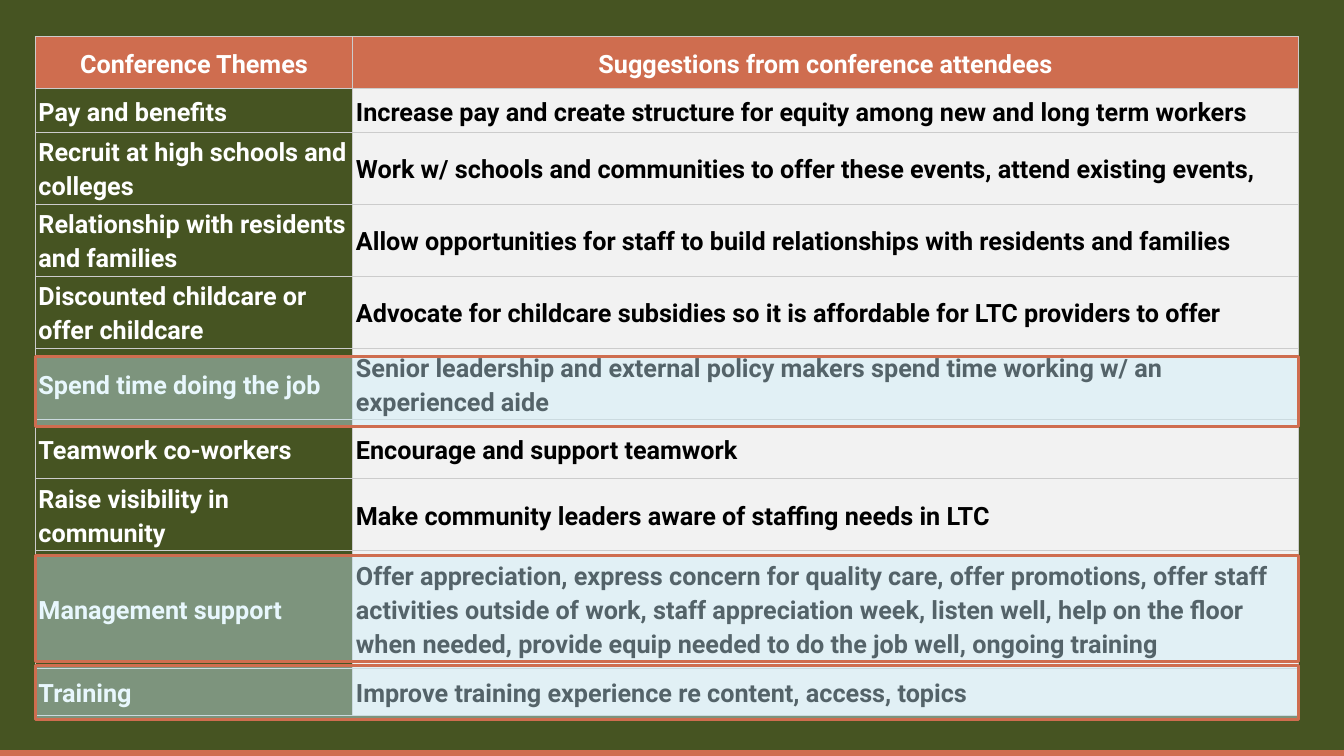
from lxml import etree
from pptx import Presentation
from pptx.dml.color import RGBColor
from pptx.enum.shapes import MSO_SHAPE
from pptx.enum.text import MSO_ANCHOR, PP_ALIGN
from pptx.oxml.ns import qn
from pptx.util import Cm, Pt

RECTANGLE = MSO_SHAPE.RECTANGLE
MIDDLE = MSO_ANCHOR.MIDDLE
CENTER, LEFT = PP_ALIGN.CENTER, PP_ALIGN.LEFT

THEME = {
    "font": "Roboto",
    "size": Pt(18),
    "green": RGBColor.from_string("465422"),
    "coral": RGBColor.from_string("CF6D4F"),
    "panel": RGBColor.from_string("F2F2F2"),
    "highlight": RGBColor.from_string("CAEEFB"),
    "highlight_alpha": "42000",
    "white": RGBColor.from_string("FFFFFF"),
    "black": RGBColor.from_string("000000"),
    "border": "CCCCCC",
    "border_width": Pt(0.75),
    "outline_width": Pt(2.25),
}

ROWS = [
    (1.32, 0, "Conference Themes", "Suggestions from conference attendees"),
    (1.09, 3, "Pay and benefits",
     "Increase pay and create structure for equity among new and long term workers"),
    (1.63, 3, "Recruit at high schools and colleges",
     "Work w/ schools and communities to offer these events, attend existing events,"),
    (1.75, 3, "Relationship with residents and families",
     "Allow opportunities for staff to build relationships with residents and families"),
    (1.75, 3, "Discounted childcare or offer childcare",
     "Advocate for childcare subsidies so it is affordable for LTC providers to offer"),
    (1.47, 3, "Spend time doing the job",
     "Senior leadership and external policy makers spend time working w/ an experienced aide"),
    (1.47, 3, "Teamwork co-workers", "Encourage and support teamwork"),
    (1.75, 3, "Raise visibility in community",
     "Make community leaders aware of staffing needs in LTC"),
    (2.97, 3, "Management support",
     "Offer appreciation, express concern for quality care, offer promotions, offer staff "
     "activities outside of work, staff appreciation week, listen well, help on the floor "
     "when needed, provide equip needed to do the job well, ongoing training"),
    (1.19, 0, "Training", "Improve training experience re content, access, topics"),
]
COLUMN_WIDTHS = [8.0, 23.83]
TABLE_LEFT, TABLE_TOP = 0.89, 0.92
TABLE_WIDTH = sum(COLUMN_WIDTHS)
HIGHLIGHTS = [(8.99, 1.75), (16.76, 1.37), (14.0, 2.67)]
CELL_FORMAT = {
    "margin_left": Cm(0.08),
    "margin_right": Cm(0.08),
    "margin_top": Cm(0.05),
    "margin_bottom": Cm(0.05),
    "vertical_anchor": MIDDLE,
}


def add_rectangle(slide, left, top, width, height, color):
    shape = slide.shapes.add_shape(RECTANGLE, Cm(left), Cm(top), Cm(width), Cm(height))
    shape.shadow.inherit = False
    shape.fill.solid()
    shape.fill.fore_color.rgb = color
    shape.line.fill.background()
    return shape


def add_borders(cell):
    properties = cell._tc.get_or_add_tcPr()
    for position, side in enumerate(("a:lnL", "a:lnR", "a:lnT", "a:lnB")):
        line = etree.Element(qn(side), w=str(THEME["border_width"]))
        fill = etree.SubElement(line, qn("a:solidFill"))
        etree.SubElement(fill, qn("a:srgbClr"), val=THEME["border"])
        properties.insert(position, line)


presentation = Presentation()
presentation.slide_width = Cm(33.87)
presentation.slide_height = Cm(19.05)
slide = presentation.slides.add_slide(presentation.slide_layouts[6])
slide.background.fill.solid()
slide.background.fill.fore_color.rgb = THEME["green"]

add_rectangle(slide, 0, 18.9, 33.87, 0.76, THEME["coral"])

table = slide.shapes.add_table(
    len(ROWS), len(COLUMN_WIDTHS), Cm(TABLE_LEFT), Cm(TABLE_TOP),
    Cm(TABLE_WIDTH), Cm(sum(row[0] for row in ROWS)),
).table
table.first_row = False
table.horz_banding = False
for column, width in zip(table.columns, COLUMN_WIDTHS):
    column.width = Cm(width)

for row_index, (height, space_before, *texts) in enumerate(ROWS):
    table.rows[row_index].height = Cm(height)
    is_header = row_index == 0
    for column_index, text in enumerate(texts):
        cell = table.cell(row_index, column_index)
        is_theme = column_index == 0
        for name, value in CELL_FORMAT.items():
            setattr(cell, name, value)
        if is_theme and not is_header:
            cell.fill.background()
        else:
            cell.fill.solid()
            cell.fill.fore_color.rgb = THEME["coral" if is_header else "panel"]
        add_borders(cell)

        paragraph = cell.text_frame.paragraphs[0]
        paragraph.alignment = CENTER if is_header else LEFT
        paragraph.line_spacing = 1.15
        is_last_theme = is_theme and row_index == len(ROWS) - 1
        paragraph.space_before = Pt(12 if is_last_theme else space_before)
        run = paragraph.add_run()
        run.text = text
        for name, value in {"name": THEME["font"], "size": THEME["size"], "bold": True}.items():
            setattr(run.font, name, value)
        run.font.color.rgb = THEME["white" if is_header or is_theme else "black"]

for top, height in HIGHLIGHTS:
    shape = add_rectangle(slide, TABLE_LEFT, top, TABLE_WIDTH, height, THEME["highlight"])
    color = shape.fill._xPr.find(qn("a:solidFill")).find(qn("a:srgbClr"))
    etree.SubElement(color, qn("a:alpha"), val=THEME["highlight_alpha"])
    shape.line.color.rgb = THEME["coral"]
    shape.line.width = THEME["outline_width"]

presentation.save("out.pptx")
